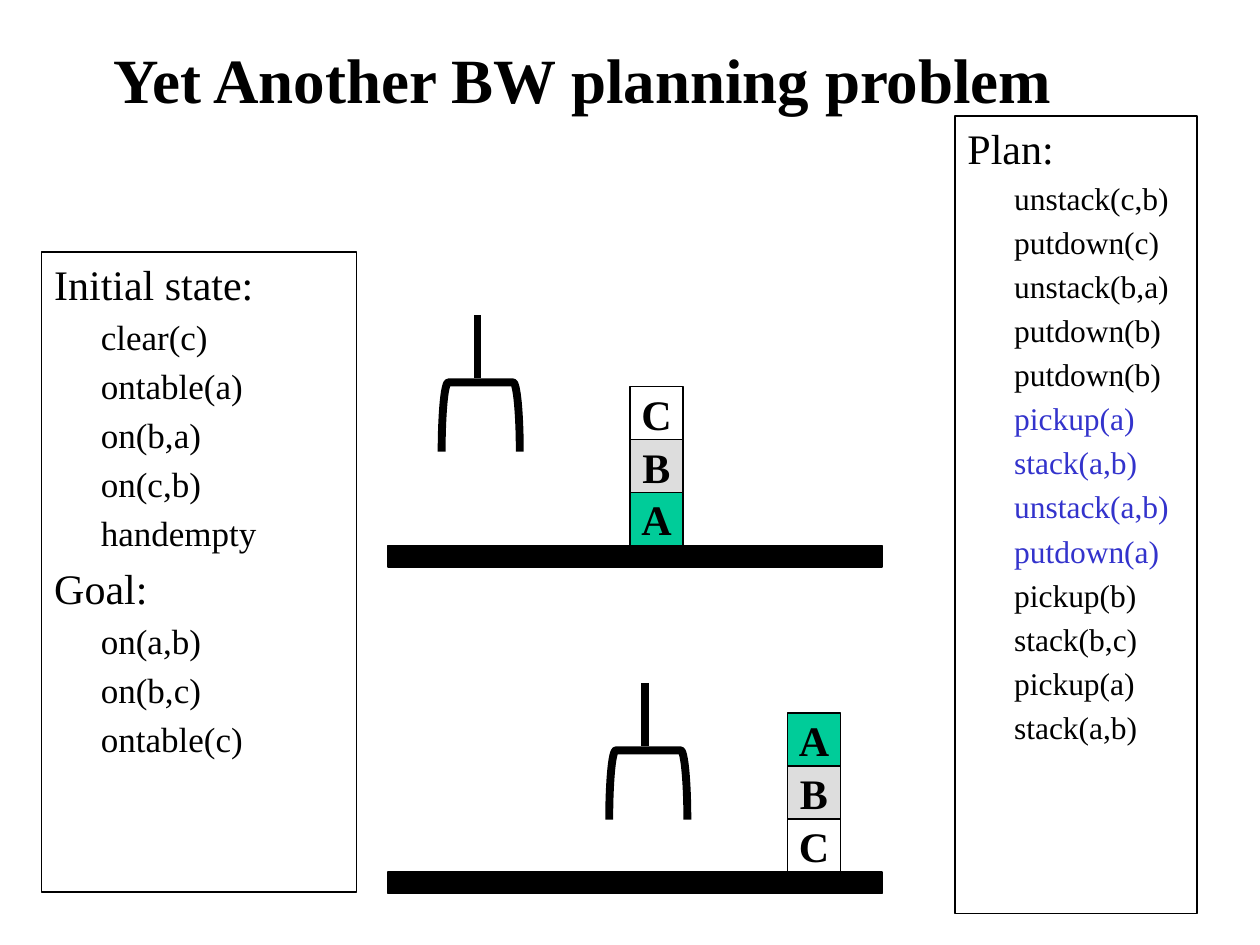
from lxml import etree
from pptx import Presentation
from pptx import util as u
from pptx.dml.color import RGBColor
from pptx.enum import shapes, text
from pptx.oxml.ns import qn

BLACK = RGBColor(0x00, 0x00, 0x00)
GREEN = RGBColor(0x00, 0xCC, 0x99)
GREY = RGBColor(0xDD, 0xDD, 0xDD)
BLUE = RGBColor(0x33, 0x33, 0xCC)
BLOCK_FILLS = {"A": GREEN, "B": GREY, "C": None}
BLOCK = 0.42

STATES = [
    ("Initial state:", ["clear(c)", "ontable(a)", "on(b,a)", "on(c,b)", "handempty"]),
    ("Goal:", ["on(a,b)", "on(b,c)", "ontable(c)"]),
]
PLAN = [
    ("Plan:", ["unstack(c,b)", "putdown(c)", "unstack(b,a)", "putdown(b)", "putdown(b)",
               "pickup(a)", "stack(a,b)", "unstack(a,b)", "putdown(a)",
               "pickup(b)", "stack(b,c)", "pickup(a)", "stack(a,b)"]),
]
DETOUR = range(5, 9)  # plan steps that undo each other


class BlocksSlide:
    font = "Times New Roman"

    def __init__(self, prs):
        self.slide = prs.slides.add_slide(prs.slide_layouts[1])
        self.shapes = self.slide.shapes

    def place(self, shape, left, top, width, height):
        shape.left, shape.top = u.Inches(left), u.Inches(top)
        shape.width, shape.height = u.Inches(width), u.Inches(height)

    def style_run(self, paragraph, size, color=BLACK, bold=False):
        font = paragraph.runs[0].font
        font.name, font.size, font.bold = self.font, u.Pt(size), bold
        font.color.rgb = color

    def outline(self, shape, width=0.75):
        shape.line.color.rgb = BLACK
        shape.line.width = u.Pt(width)

    def title(self, wording):
        title = self.shapes.title
        self.place(title, 0, 0, 9.25, 1.25)
        title.text_frame.text = wording
        title.text_frame.auto_size = text.MSO_AUTO_SIZE.NONE
        self.style_run(title.text_frame.paragraphs[0], 36, bold=True)

    def outline_list(self, box, sections, item_size, highlighted=()):
        """Fill a framed box with headings, each followed by its indented items."""
        self.outline(box)
        frame = box.text_frame
        frame.word_wrap = True
        frame.auto_size = text.MSO_AUTO_SIZE.NONE
        frame.vertical_anchor = text.MSO_ANCHOR.TOP
        lines = []
        for heading, items in sections:
            lines.append((heading, 0, 24, BLACK))
            lines += [(item, 1, item_size, BLUE if i in highlighted else BLACK)
                      for i, item in enumerate(items)]
        frame.text = "\n".join(line[0] for line in lines)
        for paragraph, (_, level, size, color) in zip(frame.paragraphs, lines):
            paragraph.level = level
            paragraph.alignment = text.PP_ALIGN.LEFT
            self.style_run(paragraph, size, color)
            self.indent(paragraph, 0.62 if level else 0.25)

    def indent(self, paragraph, margin):
        """Hanging indent, 20% space before and no bullet."""
        props = paragraph._p.get_or_add_pPr()
        props.set("marL", str(u.Inches(margin)))
        props.set("indent", str(u.Inches(-0.25)))
        before = etree.SubElement(props, qn("a:spcBef"))
        etree.SubElement(before, qn("a:spcPct")).set("val", "20000")
        etree.SubElement(props, qn("a:buNone"))

    def rectangle(self, parent, left, top, width, height, fill=None):
        box = parent.add_shape(shapes.MSO_SHAPE.RECTANGLE, 0, 0, 0, 0)
        self.place(box, left, top, width, height)
        box.shadow.inherit = False
        if fill is None:
            box.fill.background()
        else:
            box.fill.solid()
            box.fill.fore_color.rgb = fill
        self.outline(box)
        return box

    def tower(self, parent, left, table_top, letters):
        """Table with blocks stacked on it, named from the bottom up."""
        self.rectangle(parent, 3.08, table_top, 3.92, 0.17, BLACK)
        for level, letter in enumerate(letters, start=1):
            block = self.rectangle(parent, left, table_top - level * BLOCK,
                                   BLOCK, BLOCK, BLOCK_FILLS[letter])
            frame = block.text_frame
            frame.text = letter
            frame.word_wrap = False
            frame.vertical_anchor = text.MSO_ANCHOR.MIDDLE
            frame.paragraphs[0].alignment = text.PP_ALIGN.CENTER
            self.style_run(frame.paragraphs[0], 24, bold=True)

    def hand(self, parent, x, top):
        """Robot hand hanging from an arm that starts at (x, top)."""
        gripper = parent.add_shape(shapes.MSO_SHAPE.RIGHT_BRACKET, 0, 0, 0, 0)
        self.place(gripper, x - 0.25, top + 0.5, 0.55, 0.62)
        gripper.rotation = 270
        gripper.adjustments[0] = 0.095
        gripper.shadow.inherit = False
        gripper.fill.background()
        self.outline(gripper, 4.5)
        arm = parent.add_connector(shapes.MSO_CONNECTOR.STRAIGHT, u.Inches(x), u.Inches(top),
                                   u.Inches(x), u.Inches(top + 0.5))
        etree.SubElement(arm._element.spPr, qn("a:effectLst"))
        self.outline(arm, 4.5)


def main():
    prs = Presentation()
    prs.slide_width, prs.slide_height = u.Inches(10), u.Inches(7.5)
    page = BlocksSlide(prs)
    page.title("Yet Another BW planning problem")

    states = page.slide.placeholders[1]
    page.place(states, 0.33, 2, 2.5, 5.08)
    page.outline_list(states, STATES, 20)

    page.tower(page.shapes, 5, 4.33, "ABC")
    page.hand(page.shapes.add_group_shape().shapes, 3.79, 2.5)

    goal_scene = page.shapes.add_group_shape().shapes
    page.tower(goal_scene, 6.25, 6.92, "CBA")
    page.hand(goal_scene, 5.12, 5.42)

    plan = page.rectangle(page.shapes, 7.58, 0.92, 1.92, 6.33)
    page.outline_list(plan, PLAN, 18, DETOUR)
    prs.save("out.pptx")


if __name__ == "__main__":
    main()
